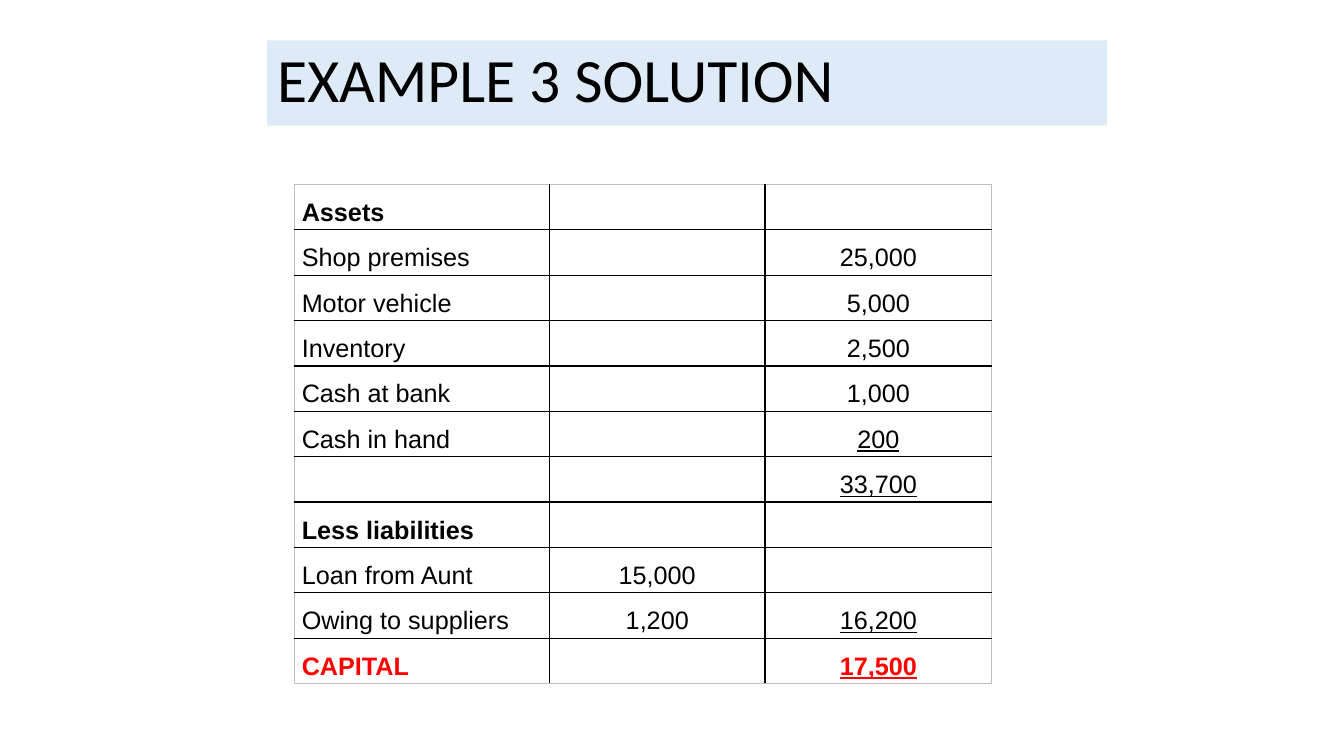
from pptx import Presentation
from pptx.dml.color import RGBColor
from pptx.enum.text import MSO_ANCHOR, MSO_AUTO_SIZE, PP_ALIGN
from pptx.oxml.ns import qn
from pptx.util import Pt
from lxml import etree

MIDDLE = MSO_ANCHOR.MIDDLE
NO_FIT = MSO_AUTO_SIZE.NONE
LEFT, CENTER = PP_ALIGN.LEFT, PP_ALIGN.CENTER
BLACK, WHITE, RED, GREY, BLUE = "000000", "FFFFFF", "FF0000", "BFBFBF", "DEEBF7"
WIDTHS = (182.3, 154, 162)
HEIGHT = 32.4
ROWS = [
    ("Assets", "", ""),
    ("Shop premises", "", "25,000"),
    ("Motor vehicle", "", "5,000"),
    ("Inventory", "", "2,500"),
    ("Cash at bank", "", "1,000"),
    ("Cash in hand", "", "200"),
    ("", "", "33,700"),
    ("Less liabilities", "", ""),
    ("Loan from Aunt", "15,000", ""),
    ("Owing to suppliers", "1,200", "16,200"),
    ("CAPITAL", "", "17,500"),
]
BOLD = {"Assets", "Less liabilities", "CAPITAL", "17,500"}
TOTALS = {"200", "33,700", "16,200", "17,500"}


def color(code):
    return RGBColor.from_string(code)


def paint(item, code):
    item.fill.solid()
    item.fill.fore_color.rgb = color(code)


def add_run(para, text, face, size, code=BLACK, bold=False, under=False):
    run = para.add_run()
    run.text = text
    font = run.font
    font.name, font.size = face, Pt(size)
    font.bold, font.underline = bold, under
    font.color.rgb = color(code)


def add_title(slide, text):
    title = slide.shapes.title
    title.left, title.top = Pt(190.8), Pt(28.8)
    title.width, title.height = Pt(600), Pt(61)
    paint(title, BLUE)
    frame = title.text_frame
    frame.auto_size = NO_FIT
    frame.word_wrap = True
    frame.vertical_anchor = MIDDLE
    para = frame.paragraphs[0]
    para.alignment = LEFT
    para.line_spacing = 0.9
    add_run(para, text, "Calibri", 44)


def add_edge(cell, side, code):
    props = cell._tc.get_or_add_tcPr()
    line = etree.SubElement(props, qn("a:" + side), w=str(Pt(1)))
    fill = etree.SubElement(line, qn("a:solidFill"))
    etree.SubElement(fill, qn("a:srgbClr"), val=code)


def fill_cell(cell, text, row, col):
    outer = {
        "lnL": col == 0,
        "lnR": col == len(WIDTHS) - 1,
        "lnT": row == 0,
        "lnB": row == len(ROWS) - 1,
    }
    for side, edge in outer.items():
        add_edge(cell, side, GREY if edge else BLACK)
    paint(cell, WHITE)
    cell.margin_left = cell.margin_right = Pt(5.4)
    cell.margin_top = cell.margin_bottom = 0
    para = cell.text_frame.paragraphs[0]
    para.alignment = CENTER if col else LEFT
    para.line_spacing = 1.5
    para.font.size = Pt(18)
    if text:
        code = RED if row == len(ROWS) - 1 else BLACK
        add_run(para, text, "Arial", 18, code, text in BOLD, text in TOTALS)


def add_sheet(slide):
    frame = slide.shapes.add_table(
        len(ROWS), len(WIDTHS), Pt(210.2), Pt(131.8),
        Pt(sum(WIDTHS)), Pt(HEIGHT * len(ROWS)))
    table = frame.table
    table.first_row = table.horz_banding = False
    for column, width in zip(table.columns, WIDTHS):
        column.width = Pt(width)
    for row, texts in enumerate(ROWS):
        table.rows[row].height = Pt(HEIGHT)
        for col, text in enumerate(texts):
            fill_cell(table.cell(row, col), text, row, col)


def main():
    deck = Presentation()
    deck.slide_width, deck.slide_height = Pt(960), Pt(540)
    slide = deck.slides.add_slide(deck.slide_layouts[5])
    add_title(slide, "EXAMPLE 3 SOLUTION")
    add_sheet(slide)
    deck.save("out.pptx")


if __name__ == "__main__":
    main()
